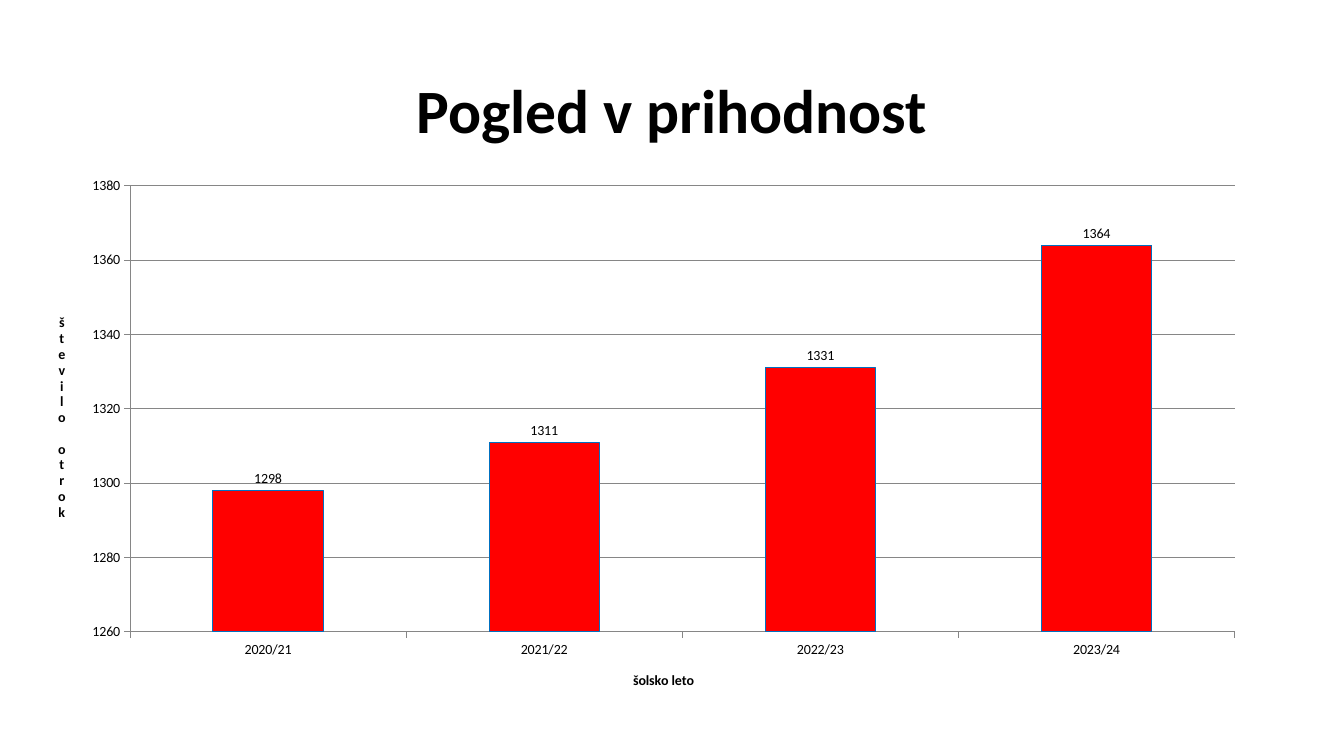
"""Build a slide with a column chart of expected numbers of children by school year."""
from lxml import etree
from pptx import Presentation
from pptx import util as u
from pptx.chart import data as chart_data
from pptx.dml.color import RGBColor
from pptx.enum import chart as chart_enum, text
from pptx.oxml import parse_xml
from pptx.oxml.ns import nsdecls, qn

BLACK = RGBColor(0x00, 0x00, 0x00)
RED = RGBColor(0xFF, 0x00, 0x00)
BLUE = RGBColor(0x00, 0x70, 0xC0)
GRAY = RGBColor(0x86, 0x86, 0x86)
FONT = "Calibri"
CHILDREN = {"2020/21": 1298, "2021/22": 1311, "2022/23": 1331, "2023/24": 1364}
PLOT_AREA = {"x": 0.075, "y": 0.034, "w": 0.905, "h": 0.822}


def set_format(target, values):
    for name, value in values.items():
        setattr(target, name, value)


def set_font(font, size, bold=False):
    set_format(font, {"name": FONT, "size": u.Pt(size), "bold": bold})
    font.color.rgb = BLACK


presentation = Presentation()
set_format(presentation, {"slide_width": u.Cm(33.87), "slide_height": u.Cm(19.05)})
slide = presentation.slides.add_slide(presentation.slide_layouts[6])

title = slide.shapes.add_textbox(u.Cm(2.33), u.Cm(1.01), u.Cm(29.21), u.Cm(3.68))
set_format(title.text_frame, {"word_wrap": True, "vertical_anchor": text.MSO_ANCHOR.MIDDLE})
paragraph = title.text_frame.paragraphs[0]
set_format(paragraph, {"text": "Pogled v prihodnost", "alignment": text.PP_ALIGN.CENTER,
                       "line_spacing": 0.9})
set_font(paragraph.runs[0].font, 44, bold=True)

enrolment = chart_data.CategoryChartData()
enrolment.categories = list(CHILDREN)
enrolment.add_series("Series 1", list(CHILDREN.values()))
chart = slide.shapes.add_chart(
    chart_enum.XL_CHART_TYPE.COLUMN_CLUSTERED,
    u.Cm(0.97), u.Cm(4.22), u.Cm(30.76), u.Cm(13.67), enrolment).chart
set_format(chart, {"has_title": False, "has_legend": False})
set_font(chart.font, 10)

plot = chart.plots[0]
set_format(plot, {"gap_width": 150, "vary_by_categories": False, "has_data_labels": True})
set_format(plot.data_labels, {"show_value": True,
                              "position": chart_enum.XL_LABEL_POSITION.OUTSIDE_END})
set_font(plot.data_labels.font, 10)
series = plot.series[0]
series.format.fill.solid()
series.format.fill.fore_color.rgb = RED
series.format.line.color.rgb = BLUE
series.format.line.width = u.Pt(0.75)

set_format(chart.value_axis, {"minimum_scale": 1260, "maximum_scale": 1380, "major_unit": 20,
                              "has_major_gridlines": True})
gridlines = chart.value_axis.major_gridlines
for axis, caption in ((chart.category_axis, "šolsko leto"), (chart.value_axis, "število otrok")):
    set_format(axis, {"major_tick_mark": chart_enum.XL_TICK_MARK.OUTSIDE,
                      "minor_tick_mark": chart_enum.XL_TICK_MARK.NONE, "has_title": True})
    set_font(axis.tick_labels.font, 10)
    axis.axis_title.text_frame.text = caption
    set_font(axis.axis_title.text_frame.paragraphs[0].runs[0].font, 10, bold=True)
for lined in (chart.category_axis, chart.value_axis, gridlines):
    lined.format.line.color.rgb = GRAY
    lined.format.line.width = u.Pt(0.75)

value_title_body = chart.value_axis.axis_title.text_frame._txBody.find(qn("a:bodyPr"))
value_title_body.set("rot", "0")
value_title_body.set("vert", "wordArtVert")

plot_area = chart._chartSpace.chart.plotArea
for old_layout in plot_area.findall(qn("c:layout")):
    plot_area.remove(old_layout)
layout = parse_xml(f'<c:layout {nsdecls("c")}><c:manualLayout/></c:layout>')
settings = {"layoutTarget": "inner", "xMode": "edge", "yMode": "edge", **PLOT_AREA}
for name, value in settings.items():
    etree.SubElement(layout[0], qn(f"c:{name}")).set("val", str(value))
plot_area.insert(0, layout)

presentation.save("out.pptx")
